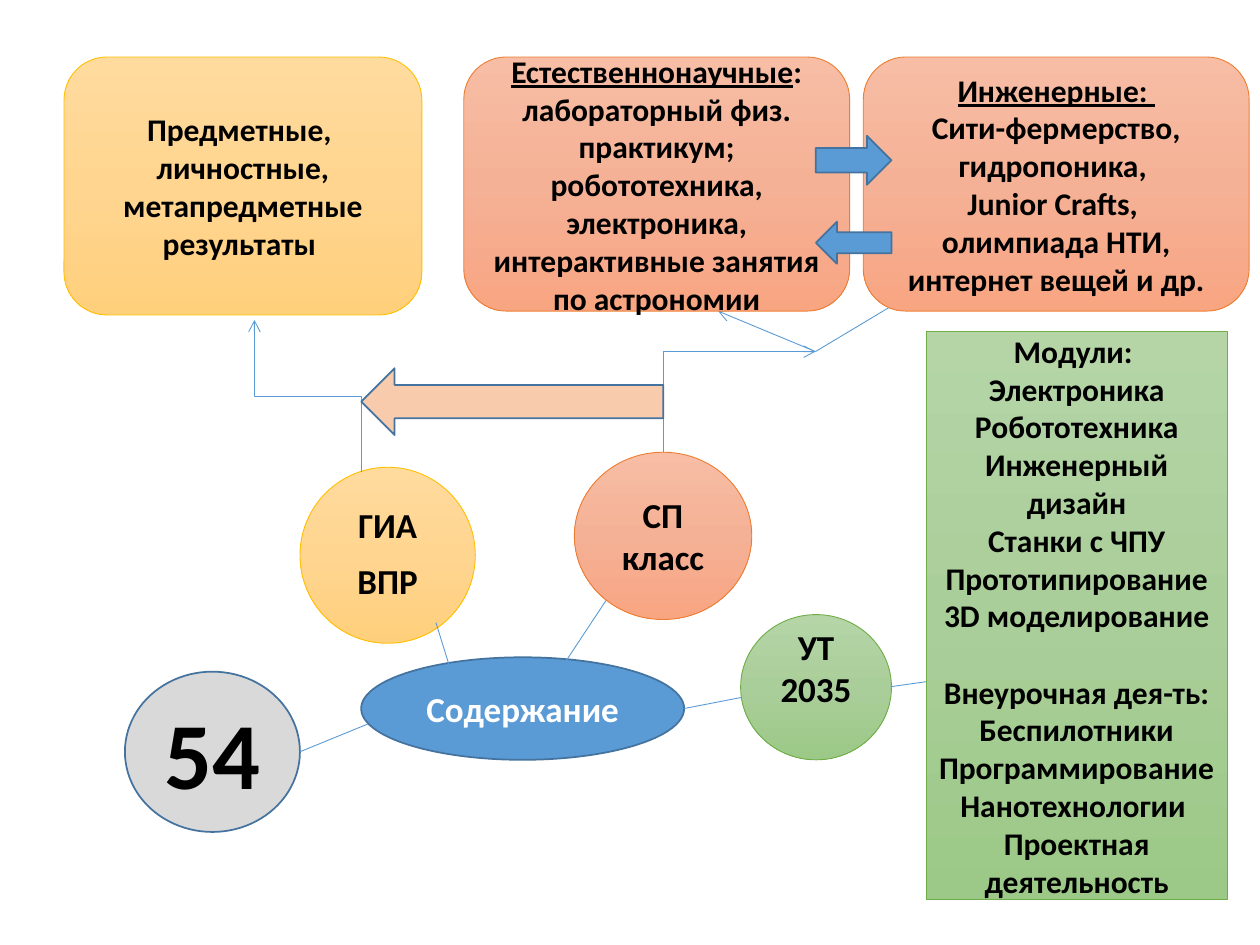
from copy import deepcopy

from pptx import Presentation
from pptx.dml.color import RGBColor
from pptx.enum.shapes import MSO_CONNECTOR, MSO_SHAPE
from pptx.enum.text import MSO_ANCHOR, PP_ALIGN
from pptx.oxml.ns import qn
from pptx.util import Pt

COLORS = {
    "black": "000000", "white": "FFFFFF", "blue": "5B9BD5", "navy": "43739E",
    "gray": "D9D9D9", "peach": "F8CBAD",
    "gold_line": "FFC000", "orange_line": "ED7D31", "green_line": "70AD47",
}
GRADIENTS = {
    "gold": ("FFDB9E", "FFD590", "FFD07C"),
    "orange": ("F7BDA5", "F5B196", "F8A582"),
    "green": ("B5D5A7", "AACE9A", "9CC987"),
}


def color(name):
    return RGBColor.from_string(COLORS[name])


def write_text(frame, text, size=18, ink="black", underlined="", line_spacing=None,
               gap=0, section="", section_gap=0, bottom=3.6):
    frame.word_wrap = True
    frame.vertical_anchor = MSO_ANCHOR.MIDDLE
    frame.margin_bottom = Pt(bottom)
    for index, line in enumerate(text.split("\n")):
        para = frame.paragraphs[0] if index == 0 else frame.add_paragraph()
        para.alignment = PP_ALIGN.CENTER
        para.line_spacing = line_spacing
        if index:
            para.space_before = Pt(section_gap if line == section else gap)
        lead = underlined if index == 0 else ""
        for part, underline in ((lead, True), (line[len(lead):], False)):
            if part:
                span = para.add_run()
                span.text = part
                span.font.name = "Calibri"
                span.font.size = Pt(size)
                span.font.bold = True
                span.font.underline = underline
                span.font.color.rgb = color(ink)


class Diagram:
    def __init__(self, deck):
        self.page = deck.slides.add_slide(deck.slide_layouts[6])

    def shape(self, kind, place, fill, line="navy", weight=1, text="", rotation=0, **style):
        box = self.page.shapes.add_shape(kind, *(Pt(value) for value in place))
        box.shadow.inherit = False
        box.rotation = rotation
        if fill in GRADIENTS:
            self.shade(box, GRADIENTS[fill])
            line, weight = fill + "_line", 0.5
        else:
            box.fill.solid()
            box.fill.fore_color.rgb = color(fill)
        box.line.color.rgb = color(line)
        box.line.width = Pt(weight)
        if text:
            write_text(box.text_frame, text, **style)

    def shade(self, box, tones):
        box.fill.gradient()
        box.fill.gradient_angle = 270
        stop_list = box._element.spPr.find(qn("a:gradFill")).find(qn("a:gsLst"))
        stop_list.insert(1, deepcopy(stop_list[0]))
        for index, stop in enumerate(box.fill.gradient_stops):
            stop.position = index / 2
            stop.color.rgb = RGBColor.from_string(tones[index])

    def line(self, start, end, arrow=False, kind=MSO_CONNECTOR.STRAIGHT):
        link = self.page.shapes.add_connector(kind, *(Pt(value) for value in (*start, *end)))
        link.line.color.rgb = color("blue")
        link.line.width = Pt(0.5)
        properties = link._element.spPr
        if arrow:
            outline = properties.find(qn("a:ln"))
            outline.append(outline.makeelement(qn("a:tailEnd"), {"type": "arrow"}))
        properties.append(properties.makeelement(qn("a:effectLst"), {}))
        return link

    def upward_elbow(self, start, end, preset):
        middle_x, middle_y = ((a + b) / 2 for a, b in zip(start, end))
        turned = [(middle_x - (y - middle_y), middle_y + (x - middle_x)) for x, y in (start, end)]
        link = self.line(*turned, arrow=True, kind=MSO_CONNECTOR.ELBOW)
        properties = link._element.spPr
        properties.find(qn("a:xfrm")).set("rot", str(270 * 60000))
        properties.find(qn("a:prstGeom")).set("prst", preset)


def main():
    deck = Presentation()
    deck.slide_width, deck.slide_height = Pt(720), Pt(540)
    diagram = Diagram(deck)
    oval, rounded, arrow = MSO_SHAPE.OVAL, MSO_SHAPE.ROUNDED_RECTANGLE, MSO_SHAPE.RIGHT_ARROW
    fork = (466, 200.9)

    diagram.shape(oval, (71.4, 383.8, 100, 91.6), "gray", text="54", size=54)
    diagram.line((171.4, 429.6), (221.8, 409))
    diagram.shape(oval, (206.4, 375.6, 184.6, 58.6), "blue", text="Содержание",
                  size=20, ink="white")
    diagram.shape(oval, (171.4, 267, 100.2, 100.6), "gold", text="ГИА\nВПР",
                  size=20, line_spacing=0.9, gap=10)
    for start, end in (
        ((249.1, 355.7), (257.8, 383.8)),
        ((321.8, 380.2), (354.2, 331.2)),
        ((391, 404.9), (425.5, 398.2)),
    ):
        diagram.line(start, end)
    diagram.shape(oval, (328.2, 258.4, 101.4, 95.6), "orange", text="СП\nкласс", size=20)
    diagram.shape(oval, (423.2, 351.2, 86.2, 83), "green", text="УТ\n2035", size=20, bottom=25.6)

    diagram.upward_elbow((206.6, 270), (145.4, 182.9), "bentConnector3")
    diagram.upward_elbow((379, 258.4), fork, "bentConnector2")
    for end in ((410.4, 177.8), (521.3, 167.8)):
        diagram.line(fork, end, arrow=True)

    diagram.shape(rounded, (36.6, 32.6, 204.5, 147.4), "gold",
                  text="Предметные, \nличностные, метапредметные результаты ")
    diagram.shape(rounded, (265, 32.6, 220.5, 145.2), "orange",
                  text="Естественнонаучные:\nлабораторный физ. практикум; робототехника, "
                       "электроника, интерактивные занятия по астрономии",
                  underlined="Естественнонаучные")
    diagram.shape(rounded, (493.3, 32.6, 220.5, 145.2), "orange",
                  text="Инженерные: \nСити-фермерство, гидропоника, \nJunior Crafts, \n"
                       "олимпиада НТИ, интернет вещей и др.",
                  underlined="Инженерные: ")
    diagram.line((509, 392.4), (550.1, 386.6))
    modules = ("Модули: ", "Электроника", "Робототехника", "Инженерный дизайн",
               "Станки с ЧПУ", "Прототипирование", "3D моделирование",
               "Внеурочная дея-ть:", "Беспилотники", "Программирование",
               "Нанотехнологии ", "Проектная деятельность")
    diagram.shape(MSO_SHAPE.RECTANGLE, (529.2, 189.4, 172.1, 324.7), "green",
                  text="\n".join(modules), section="Внеурочная дея-ть:", section_gap=22)

    diagram.shape(arrow, (466.2, 77.6, 43.2, 28), "blue")
    diagram.shape(arrow, (466.2, 126.7, 43.2, 24), "blue", rotation=180)
    diagram.shape(arrow, (206.4, 210.4, 172.6, 38.2), "peach", rotation=180)
    deck.save("out.pptx")


if __name__ == "__main__":
    main()
